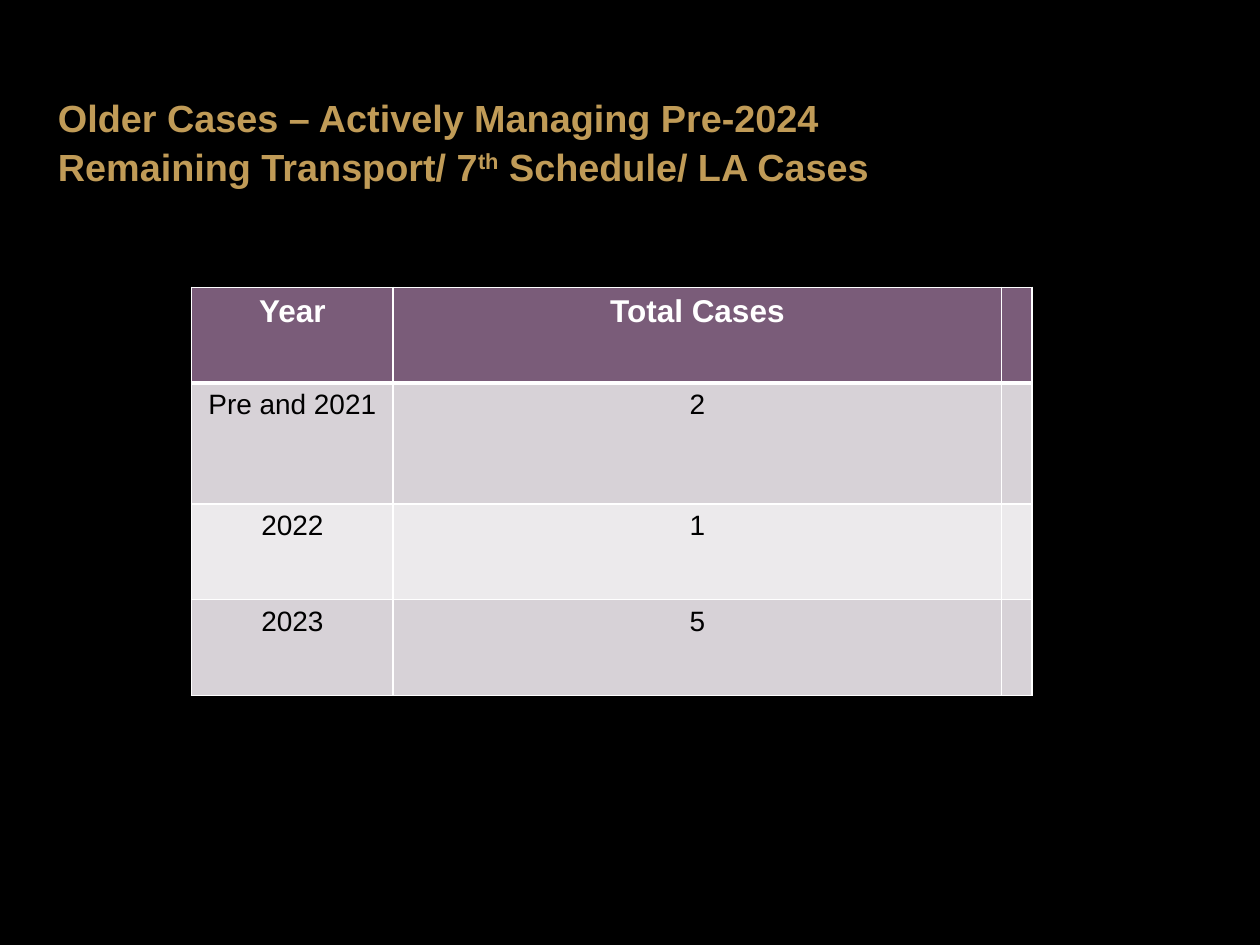
from lxml.etree import SubElement
from pptx import Presentation
from pptx.dml.color import RGBColor as Rgb
from pptx.enum.text import MSO_ANCHOR as Anchor, MSO_AUTO_SIZE as AutoSize, PP_ALIGN as Align
from pptx.oxml.ns import qn
from pptx.util import Inches, Pt

COLORS = {
    "background": "000000",
    "title": "C09B57",
    "header": "7A5C79",
    "odd": "D7D2D7",
    "even": "ECEAEC",
    "border": "FFFFFF",
    "header_text": "FFFFFF",
    "body_text": "000000",
}
TITLE_FONT = {"name": "Arial", "size": Pt(21.6), "bold": True}
HEADER_FONT = {"name": "Arial", "size": Pt(18), "bold": True}
BODY_FONT = {"name": "Arial", "size": Pt(16), "bold": False}

TITLE_PARTS = [
    ("Older Cases – Actively Managing Pre-2024 Remaining Transport/ 7", 0),
    ("th", 30),
    (" Schedule/ LA Cases", 0),
]
CASES = [
    ("Year", "Total Cases", ""),
    ("Pre and 2021", "2", ""),
    ("2022", "1", ""),
    ("2023", "5", ""),
]
COLUMN_WIDTHS = [1.6, 4.83, 0.23]
ROW_HEIGHTS = [0.76, 0.96, 0.76, 0.76]


def apply_format(target, values):
    for name, value in values.items():
        setattr(target, name, value)


def style_font(font, values, color):
    apply_format(font, values)
    font.color.rgb = Rgb.from_string(COLORS[color])


def add_title(slide):
    title = slide.shapes.title
    apply_format(title, {"left": Inches(0.36), "top": Inches(0.67),
                         "width": Inches(6.81), "height": Inches(0.84)})
    frame = title.text_frame
    apply_format(frame, {"word_wrap": True, "auto_size": AutoSize.NONE,
                         "vertical_anchor": Anchor.TOP})
    heading = frame.paragraphs[0]
    apply_format(heading, {"alignment": Align.LEFT, "line_spacing": Pt(28),
                           "space_before": Pt(0)})
    for words, baseline in TITLE_PARTS:
        run = heading.add_run()
        run.text = words
        style_font(run.font, TITLE_FONT, "title")
        if baseline:
            run._r.get_or_add_rPr().set("baseline", str(baseline * 1000))


def add_borders(cell, widths):
    properties = cell._tc.get_or_add_tcPr()
    for side, width in widths.items():
        line = SubElement(properties, qn(f"a:ln{side}"), w=str(Pt(width)))
        fill = SubElement(line, qn("a:solidFill"))
        SubElement(fill, qn("a:srgbClr"), val=COLORS["border"])


def fill_cell(cell, words, row):
    is_header = row == 0
    add_borders(cell, {"L": 1, "R": 1, "T": 3 if row == 1 else 1, "B": 3 if is_header else 1})
    band = "header" if is_header else "odd" if row % 2 else "even"
    cell.fill.solid()
    cell.fill.fore_color.rgb = Rgb.from_string(COLORS[band])
    entry = cell.text_frame.paragraphs[0]
    entry.alignment = Align.CENTER
    if words:
        run = entry.add_run()
        run.text = words
        style_font(run.font, HEADER_FONT if is_header else BODY_FONT,
                   "header_text" if is_header else "body_text")


def add_case_table(slide):
    frame = slide.shapes.add_table(
        len(ROW_HEIGHTS), len(COLUMN_WIDTHS), Inches(1.52), Inches(2.28),
        Inches(sum(COLUMN_WIDTHS)), Inches(sum(ROW_HEIGHTS)))
    table = frame.table
    for column, width in zip(table.columns, COLUMN_WIDTHS):
        column.width = Inches(width)
    for row, height in zip(table.rows, ROW_HEIGHTS):
        row.height = Inches(height)
    for row, entries in enumerate(CASES):
        for column, words in enumerate(entries):
            fill_cell(table.cell(row, column), words, row)


def main():
    deck = Presentation()
    apply_format(deck, {"slide_width": Inches(10), "slide_height": Inches(7.5)})
    slide = deck.slides.add_slide(deck.slide_layouts[5])
    slide.background.fill.solid()
    slide.background.fill.fore_color.rgb = Rgb.from_string(COLORS["background"])
    add_title(slide)
    add_case_table(slide)
    deck.save("out.pptx")


if __name__ == "__main__":
    main()
